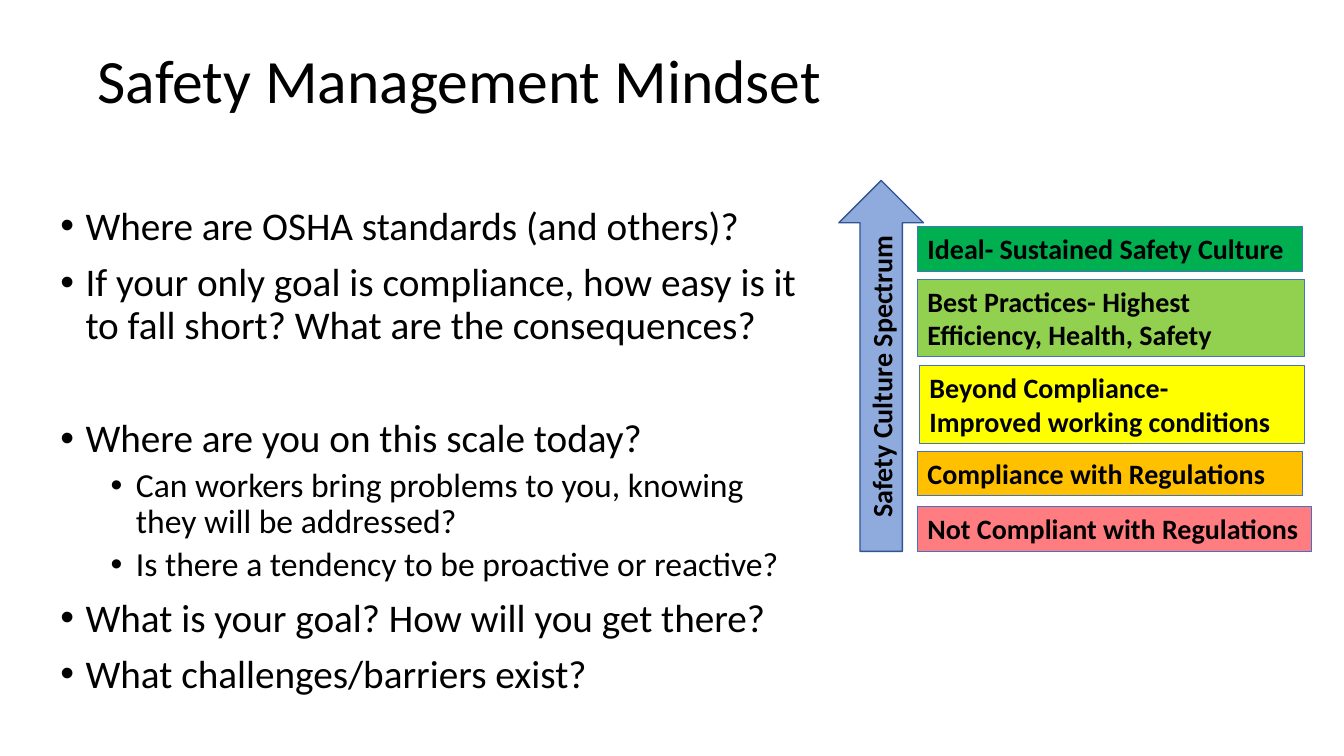
from dataclasses import dataclass

from lxml import etree
from pptx import Presentation
from pptx import util as u
from pptx.dml.color import RGBColor
from pptx.enum import shapes, text
from pptx.oxml import ns


@dataclass(frozen=True)
class Theme:
    font: str = "Calibri"
    ink: str = "000000"
    title_size: int = 44
    body_sizes: tuple[int, int] = (28, 24)
    label_size: int = 20
    band_line: str = "4472C4"
    arrow_fill: str = "8FAADC"
    arrow_line: str = "325491"


@dataclass(frozen=True)
class Bullet:
    words: str
    level: int = 0
    extra_before: float = 0  # points of additional space above


@dataclass(frozen=True)
class Band:
    lines: tuple[str, ...]
    fill: str
    top: float
    width: float
    height: float = 0.44
    left: float = 9.1
    wrap: bool = True


THEME = Theme()

BULLETS = (
    Bullet("Where are OSHA standards (and others)?"),
    Bullet("If your only goal is compliance, how easy is it to fall short? "
           "What are the consequences?"),
    Bullet("Where are you on this scale today?", extra_before=41),
    Bullet("Can workers bring problems to you, knowing they will be addressed?", 1),
    Bullet("Is there a tendency to be proactive or reactive?", 1),
    Bullet("What is your goal? How will you get there?"),
    Bullet("What challenges/barriers exist?"),
)

# Worst to best, from the bottom up
BANDS = (
    Band(("Not Compliant with Regulations",), "FF7C80", 5.03, 3.91, wrap=False),
    Band(("Compliance with Regulations",), "FFC000", 4.48, 3.82),
    Band(("Beyond Compliance-", "Improved working conditions"),
         "FFFF00", 3.63, 3.82, 0.77, left=9.12),
    Band(("Best Practices- Highest Efficiency, Health, Safety",),
         "92D050", 2.77, 3.84, 0.77),
    Band(("Ideal- Sustained Safety Culture",), "00B050", 2.25, 3.82),
)


def set_font(para, size: int, bold: bool = False) -> None:
    para.font.name = THEME.font
    para.font.size = u.Pt(size)
    para.font.bold = bold
    para.font.color.rgb = RGBColor.from_string(THEME.ink)


def add_text_box(page, left: float, top: float, width: float, height: float):
    box = page.shapes.add_textbox(u.Inches(left), u.Inches(top),
                                  u.Inches(width), u.Inches(height))
    box.text_frame.word_wrap = True
    return box.text_frame


def add_title(page, words: str) -> None:
    frame = add_text_box(page, 0.87, 0.1, 11.5, 1.45)
    frame.vertical_anchor = text.MSO_ANCHOR.MIDDLE
    para = frame.paragraphs[0]
    para.text = words
    para.line_spacing = 0.9
    set_font(para, THEME.title_size)


def add_bullets(page, bullets: tuple[Bullet, ...]) -> None:
    frame = add_text_box(page, 0.5, 2, 7.6, 5.41)
    for index, bullet in enumerate(bullets):
        para = frame.add_paragraph() if index else frame.paragraphs[0]
        para.text = bullet.words
        para.level = bullet.level
        para.line_spacing = 0.9
        para.space_before = u.Pt((10, 5)[bullet.level] + bullet.extra_before)
        set_font(para, THEME.body_sizes[bullet.level])
        # Hanging indent and bullet character
        properties = para._p.get_or_add_pPr()
        properties.set("marL", str(u.Inches(0.25 + 0.5 * bullet.level)))
        properties.set("indent", str(u.Inches(-0.25)))
        etree.SubElement(properties, ns.qn("a:buFont"), typeface="Arial")
        etree.SubElement(properties, ns.qn("a:buChar"), char="•")


def add_label_shape(group, kind, left: float, top: float, width: float, height: float,
                    fill: str, line: str, line_width: float, lines: tuple[str, ...],
                    align):
    shape = group.shapes.add_shape(kind, u.Inches(left), u.Inches(top),
                                   u.Inches(width), u.Inches(height))
    shape.shadow.inherit = False
    shape.fill.solid()
    shape.fill.fore_color.rgb = RGBColor.from_string(fill)
    shape.line.color.rgb = RGBColor.from_string(line)
    shape.line.width = u.Pt(line_width)
    frame = shape.text_frame
    frame.text = "\n".join(lines)
    for para in frame.paragraphs:
        para.alignment = align
        set_font(para, THEME.label_size, bold=True)
    return frame


def add_band(group, band: Band) -> None:
    frame = add_label_shape(group, shapes.MSO_SHAPE.RECTANGLE, band.left, band.top,
                            band.width, band.height, band.fill, THEME.band_line, 0.75,
                            band.lines, text.PP_ALIGN.LEFT)
    frame.vertical_anchor = text.MSO_ANCHOR.TOP
    frame.word_wrap = band.wrap
    frame.auto_size = text.MSO_AUTO_SIZE.SHAPE_TO_FIT_TEXT


def add_spectrum_arrow(group) -> None:
    frame = add_label_shape(group, shapes.MSO_SHAPE.UP_ARROW, 8.32, 1.79, 0.84, 3.68,
                            THEME.arrow_fill, THEME.arrow_line, 1,
                            ("Safety Culture Spectrum",), text.PP_ALIGN.CENTER)
    frame.vertical_anchor = text.MSO_ANCHOR.MIDDLE
    frame.word_wrap = True
    # Text reads upwards along the shaft
    frame._txBody.bodyPr.set("vert", "vert270")


def main() -> None:
    deck = Presentation()
    deck.slide_width, deck.slide_height = u.Inches(13.33), u.Inches(7.5)
    page = deck.slides.add_slide(deck.slide_layouts[6])

    # Title and questions
    add_title(page, "Safety Management Mindset")
    add_bullets(page, BULLETS)

    # Safety culture scale
    scale = page.shapes.add_group_shape()
    for band in BANDS:
        add_band(scale, band)
    add_spectrum_arrow(scale)

    deck.save("out.pptx")


if __name__ == "__main__":
    main()
